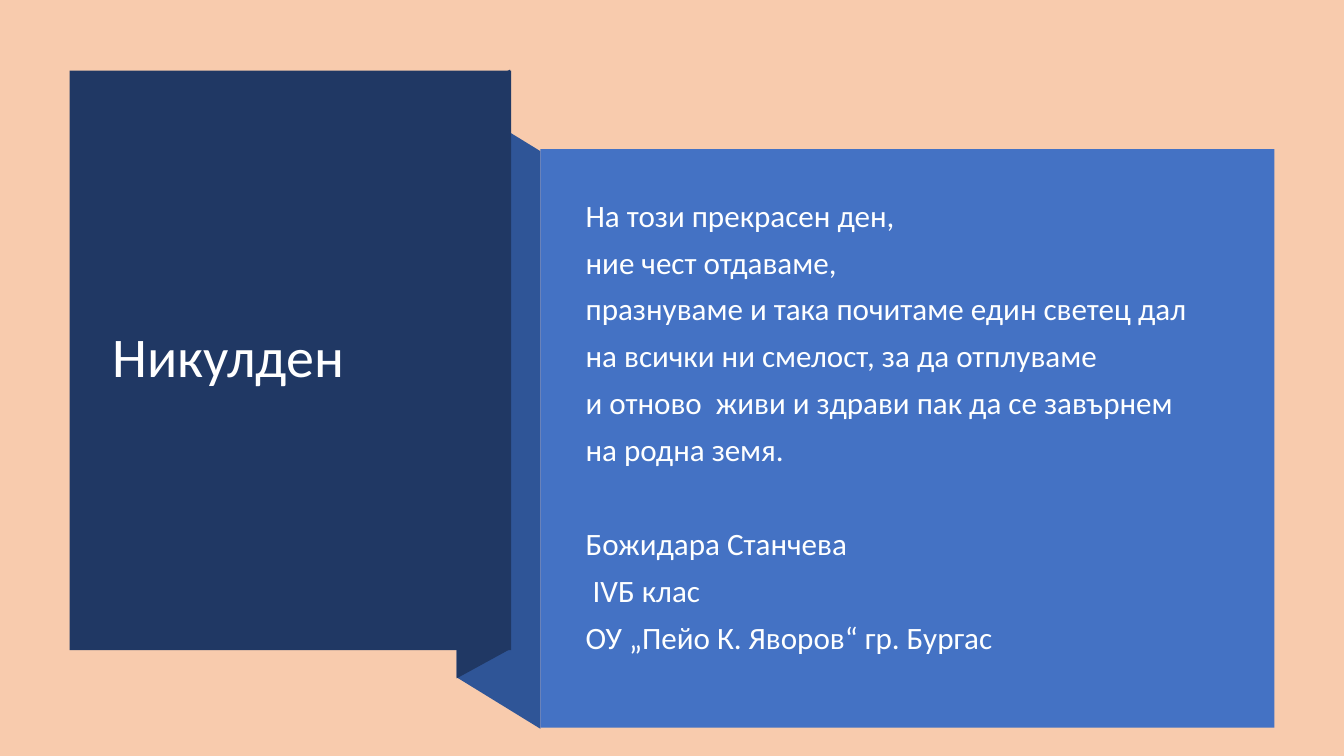
"""Build the Nikulden slide: a folded ribbon with a title panel and a poem panel."""
from pptx import Presentation
from pptx.dml.color import RGBColor
from pptx.enum.shapes import MSO_SHAPE
from pptx.enum.text import MSO_ANCHOR
from pptx.util import Inches, Pt

PEACH = RGBColor(0xF8, 0xCB, 0xAD)
NAVY = RGBColor(0x20, 0x38, 0x64)
FOLD_BLUE = RGBColor(0x2F, 0x55, 0x97)
PANEL_BLUE = RGBColor(0x44, 0x72, 0xC4)
WHITE = RGBColor(0xFF, 0xFF, 0xFF)
POEM_WHITE = RGBColor(0xFE, 0xFF, 0xFF)
RECTANGLE = MSO_SHAPE.RECTANGLE
MIDDLE = MSO_ANCHOR.MIDDLE

FONT = "Calibri"
POEM_SIZE = 22.2
LINE_GAP = 9.5
STANZA_GAP = 43.4
CLASS_INDENT = Inches(0.07)

POEM = [
    "На този прекрасен ден,",
    "ние чест отдаваме,",
    "празнуваме и така почитаме един светец дал",
    "на всички ни смелост, за да отплуваме",
    "и отново  живи и здрави пак да се завърнем",
    "на родна земя.",
]
SIGNATURE = ["Божидара Станчева", "IVБ клас", "ОУ „Пейо К. Яворов“ гр. Бургас"]

FOLDS = [
    (FOLD_BLUE, [(5.36, 7.23), (4.53, 6.72), (4.53, 0.99), (5.36, 1.5)]),
    (NAVY, [(5.06, 6.44), (4.53, 6.73), (4.53, 0.98), (5.06, 0.69)]),
]
PANELS = [
    (NAVY, 0.69, 0.7, 4.38, 5.75),
    (PANEL_BLUE, 5.36, 1.48, 7.28, 5.74),
]


def paint(shape, color):
    shape.shadow.inherit = False
    shape.fill.solid()
    shape.fill.fore_color.rgb = color
    shape.line.fill.background()


def add_text(slide, box, lines, size, color):
    text_box = slide.shapes.add_textbox(*[Inches(length) for length in box])
    text_frame = text_box.text_frame
    text_frame.word_wrap = True
    text_frame.vertical_anchor = MIDDLE
    text_frame.text = "\n".join(lines)
    for paragraph in text_frame.paragraphs:
        paragraph.line_spacing = 0.9
        for run in paragraph.runs:
            run.font.name = FONT
            run.font.size = Pt(size)
            run.font.color.rgb = color
    return text_frame.paragraphs


presentation = Presentation()
presentation.slide_width = Inches(13.33)
presentation.slide_height = Inches(7.5)
slide = presentation.slides.add_slide(presentation.slide_layouts[6])
slide.background.fill.solid()
slide.background.fill.fore_color.rgb = PEACH

for color, corners in FOLDS:
    points = [(Inches(x), Inches(y)) for x, y in corners]
    builder = slide.shapes.build_freeform(*points[0])
    builder.add_line_segments(points[1:], close=True)
    paint(builder.convert_to_shape(), color)

for color, *box in PANELS:
    panel = slide.shapes.add_shape(RECTANGLE, *[Inches(length) for length in box])
    paint(panel, color)

add_text(slide, (1.02, 1.07, 3.71, 4.99), ["Никулден"], 40, WHITE)

poem_paragraphs = add_text(
    slide, (5.71, 1.88, 6.51, 4.74), POEM + SIGNATURE, POEM_SIZE, POEM_WHITE
)
for paragraph in poem_paragraphs[1:]:
    paragraph.space_before = Pt(LINE_GAP)
poem_paragraphs[len(POEM)].space_before = Pt(STANZA_GAP)
class_paragraph = poem_paragraphs[len(POEM) + 1]
class_paragraph._p.get_or_add_pPr().set("marL", str(CLASS_INDENT))

presentation.save("out.pptx")
